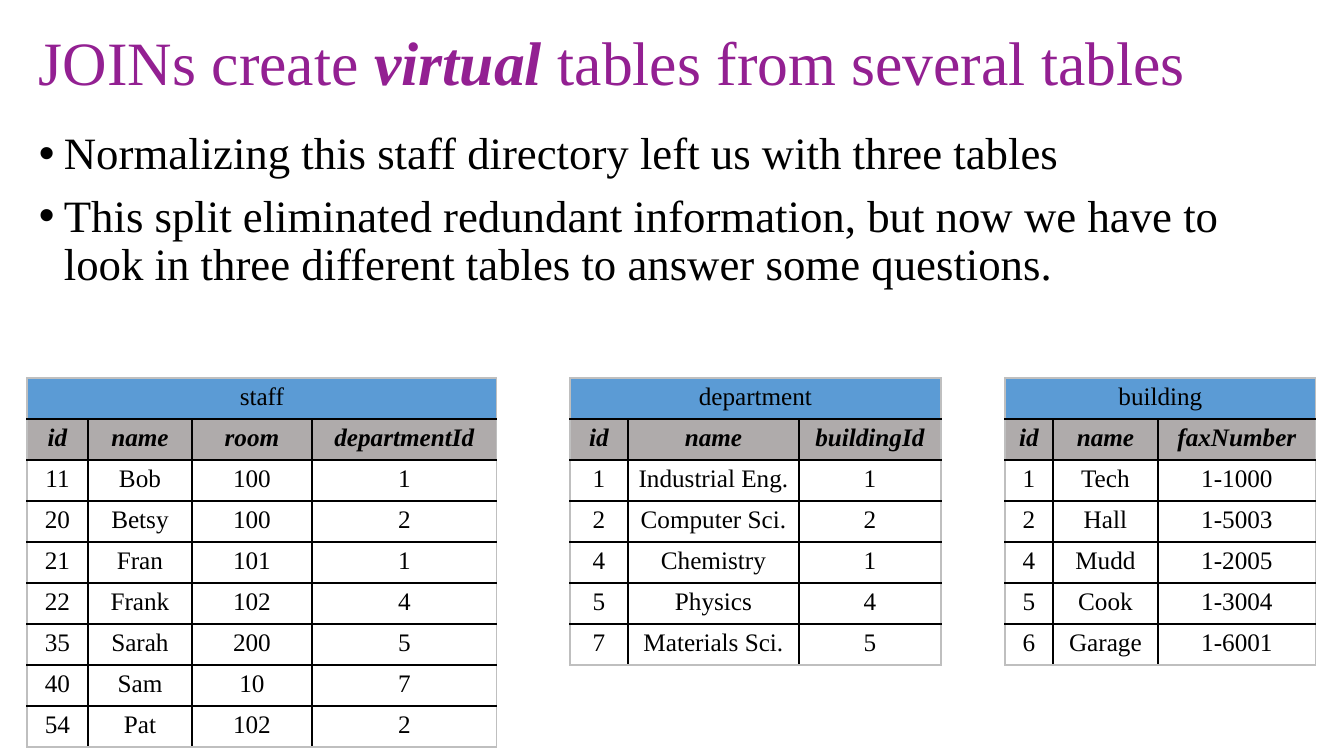
import pptx
import pptx.util
import pptx.dml.color
import pptx.enum.text
import pptx.oxml
import pptx.oxml.ns

PX = 914400 / 100.8
FONT = "Times New Roman"
BLACK, PURPLE, BLUE, GREY = "000000", "932092", "5B9BD5", "AFABAB"
EDGE = "BFBFBF"
ROW_H = 41
TABLES_Y = 378

TABLES = [
    ("department", 570, [58, 171, 142], ["id", "name", "buildingId"], [
        ["1", "Industrial Eng.", "1"],
        ["2", "Computer Sci.", "2"],
        ["4", "Chemistry", "1"],
        ["5", "Physics", "4"],
        ["7", "Materials Sci.", "5"],
    ]),
    ("building", 1005, [48, 105, 158], ["id", "name", "faxNumber"], [
        ["1", "Tech", "1-1000"],
        ["2", "Hall", "1-5003"],
        ["4", "Mudd", "1-2005"],
        ["5", "Cook", "1-3004"],
        ["6", "Garage", "1-6001"],
    ]),
    ("staff", 27, [61, 104, 120, 185], ["id", "name", "room", "departmentId"], [
        ["11", "Bob", "100", "1"],
        ["20", "Betsy", "100", "2"],
        ["21", "Fran", "101", "1"],
        ["22", "Frank", "102", "4"],
        ["35", "Sarah", "200", "5"],
        ["40", "Sam", "10", "7"],
        ["54", "Pat", "102", "2"],
    ]),
]


def px(n):
    """Turn pixels into EMU."""
    return pptx.util.Emu(round(n * PX))


def color(hex_string):
    """Turn a hex string into a colour."""
    return pptx.dml.color.RGBColor.from_string(hex_string)


def add_text(p, text, size=18, fill=BLACK, bold=False, italic=False):
    """Add one formatted run to a paragraph."""
    r = p.add_run()
    r.text = text
    r.font.name = FONT
    r.font.size = pptx.util.Pt(size)
    r.font.color.rgb = color(fill)
    r.font.bold = bold
    r.font.italic = italic


def add_box(s, x, y, w, h):
    """Add a wrapping text box and return its text frame."""
    tf = s.shapes.add_textbox(px(x), px(y), px(w), px(h)).text_frame
    tf.word_wrap = True
    return tf


def add_title(s, x, y, w, h):
    """Write the title with its emphasised word."""
    tf = add_box(s, x, y, w, h)
    tf.vertical_anchor = pptx.enum.text.MSO_ANCHOR.MIDDLE
    p = tf.paragraphs[0]
    p.line_spacing = 0.9
    add_text(p, "JOINs create ", size=44, fill=PURPLE)
    add_text(p, "virtual", size=44, fill=PURPLE, bold=True, italic=True)
    add_text(p, " tables from several tables", size=44, fill=PURPLE)


def add_bullets(s, x, y, w, h, lines):
    """Write the bulleted lines with a hanging indent."""
    tf = add_box(s, x, y, w, h)
    for i, line in enumerate(lines):
        p = tf.add_paragraph() if i else tf.paragraphs[0]
        p.line_spacing = 0.9
        p.space_before = pptx.util.Pt(10)
        pPr = p._p.get_or_add_pPr()
        pPr.set("marL", str(px(25)))
        pPr.set("indent", str(px(-25)))
        ns = pptx.oxml.ns.nsdecls("a")
        pPr.append(pptx.oxml.parse_xml(f'<a:buFont {ns} typeface="Arial"/>'))
        pPr.append(pptx.oxml.parse_xml(f'<a:buChar {ns} char="•"/>'))
        add_text(p, line, size=32)


def format_cell(cell, text, borders, fill=None, **fmt):
    """Set a cell's text, fill and border colours."""
    p = cell.text_frame.paragraphs[0]
    p.alignment = pptx.enum.text.PP_ALIGN.CENTER
    if text:
        add_text(p, text, **fmt)
    tcPr = cell._tc.get_or_add_tcPr()
    for side, line in borders.items():
        tcPr.append(pptx.oxml.parse_xml(
            f'<a:{side} {pptx.oxml.ns.nsdecls("a")} w="12700"><a:solidFill>'
            f'<a:srgbClr val="{line}"/></a:solidFill></a:{side}>'))
    if fill:
        cell.fill.solid()
        cell.fill.fore_color.rgb = color(fill)
    else:
        cell.fill.background()


def add_data_table(s, x, y, name, widths, heads, rows):
    """Add a table with a merged name row, a heading row and data rows."""
    grid = [[name] + [""] * (len(heads) - 1), heads] + rows
    table = s.shapes.add_table(len(grid), len(heads), px(x), px(y),
                               px(sum(widths)), px(ROW_H * len(grid))).table
    table.first_row = table.horz_banding = False
    for col, w in zip(table.columns, widths):
        col.width = px(w)
    for i, values in enumerate(grid):
        table.rows[i].height = px(ROW_H)
        fill = {0: BLUE, 1: GREY}.get(i)
        for j, value in enumerate(values):
            outer = {"lnL": j == 0, "lnR": i == 0 or j == len(heads) - 1,
                     "lnT": i == 0, "lnB": i == len(grid) - 1}
            borders = {side: EDGE if out else BLACK for side, out in outer.items()}
            format_cell(table.cell(i, j), value, borders, fill,
                        bold=i == 1, italic=i == 1)
    table.cell(0, 0).merge(table.cell(0, len(heads) - 1))


def main():
    """Build and save the slide."""
    prs = pptx.Presentation()
    prs.slide_width, prs.slide_height = px(1344), px(756)
    s = prs.slides.add_slide(prs.slide_layouts[6])
    add_title(s, 29, 17, 1283, 98)
    add_bullets(s, 29, 126, 1283, 617, [
        "Normalizing this staff directory left us with three tables",
        "This split eliminated redundant information, but now we have to "
        "look in three different tables to answer some questions.",
    ])
    for name, x, widths, heads, rows in TABLES:
        add_data_table(s, x, TABLES_Y, name, widths, heads, rows)
    prs.save("out.pptx")


if __name__ == "__main__":
    main()
